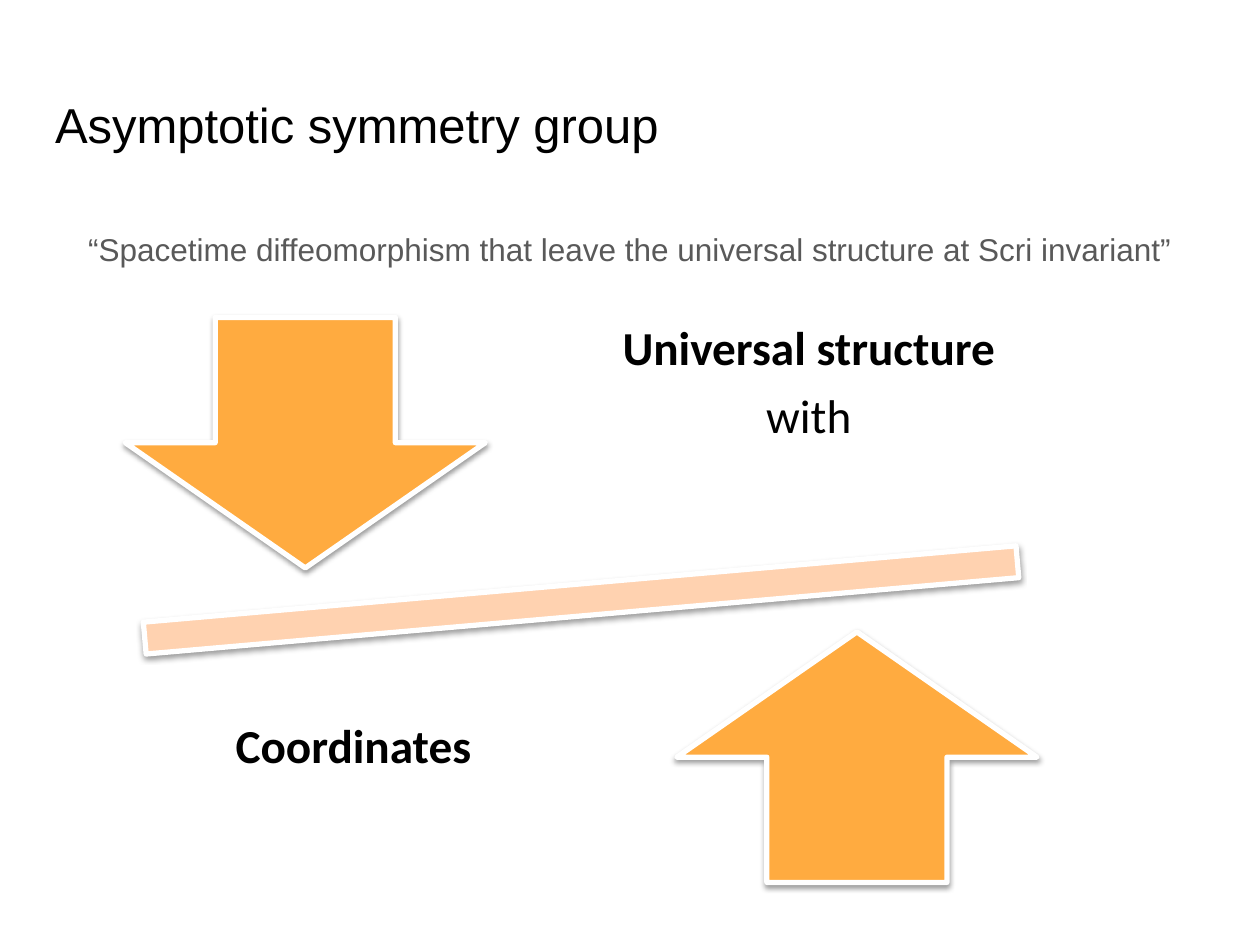
from lxml import etree
from pptx import Presentation
from pptx.dml.color import RGBColor
from pptx.enum.shapes import MSO_SHAPE as SHAPE
from pptx.enum.text import MSO_ANCHOR as ANCHOR, PP_ALIGN as ALIGN
from pptx.oxml.ns import qn
from pptx.util import Cm, Pt

HEADING = {"size": Pt(28), "name": "Arial"}
QUOTE = {"size": Pt(18), "name": "Arial"}
LABEL = {"size": Pt(27), "name": "Calibri"}


def color(value):
    return RGBColor.from_string(value)


def set_attrs(obj, values):
    for name, value in values.items():
        setattr(obj, name, value)


def add_text(slide, box, lines, font, ink="000000", para=None, margin=0.25, **frame):
    """Write lines, each a (text, bold) pair, in a text box."""
    tf = slide.shapes.add_textbox(*map(Cm, box)).text_frame
    sides = ("left", "top", "right", "bottom")
    margins = {f"margin_{side}": Cm(margin) for side in sides}
    set_attrs(tf, {"word_wrap": True, **margins, **frame})
    for i, (text, bold) in enumerate(lines):
        p = tf.paragraphs[0] if i == 0 else tf.add_paragraph()
        set_attrs(p, para or {})
        r = p.add_run()
        r.text = text
        set_attrs(r.font, {**font, "bold": bold})
        r.font.color.rgb = color(ink)


def add_shadow(sp):
    sp.shadow.inherit = False
    effects = sp._element.spPr.find(qn("a:effectLst"))
    shadow = etree.SubElement(effects, qn("a:outerShdw"), blurRad=str(Pt(3.1)),
                              dist=str(Pt(1.6)), dir="5400000", rotWithShape="0")
    ink = etree.SubElement(shadow, qn("a:srgbClr"), val="000000")
    etree.SubElement(ink, qn("a:alpha"), val="38000")


def add_solid(slide, kind, box, fill, rotation=0):
    sp = slide.shapes.add_shape(kind, *map(Cm, box))
    sp.rotation = rotation
    sp.fill.solid()
    sp.fill.fore_color.rgb = color(fill)
    sp.line.color.rgb = color("FFFFFF")
    sp.line.width = Pt(3)
    add_shadow(sp)


def add_label(slide, box, lines):
    # The deeper bottom margin lifts the centred lines.
    add_text(slide, box, lines, LABEL, margin=0.53, margin_bottom=Cm(1.9),
             vertical_anchor=ANCHOR.MIDDLE,
             para={"alignment": ALIGN.CENTER, "line_spacing": 0.9, "space_after": Pt(9.45)})


def add_balance(slide, box):
    """Draw a tilted bar with arrows and labels set point-symmetrically about its middle."""
    left, top, width, height = box
    mid_x, mid_y = left + width / 2, top + height / 2

    def centered(dx, dy, w, h):
        return mid_x + dx - w / 2, mid_y + dy - h / 2, w, h

    add_solid(slide, SHAPE.MATH_MINUS, centered(0, 0, width, 2.74), "FFD2B0", 355)
    sides = [
        (-1, SHAPE.DOWN_ARROW, 15.82, [("Universal structure", True), ("with", False)]),
        (1, SHAPE.UP_ARROW, 7.75, [("Coordinates", True)]),
    ]
    for sign, arrow, label_width, lines in sides:
        add_solid(slide, arrow, centered(sign * 5.56, sign * 3.17, 7.26, 5.05), "FFAB40")
        add_label(slide, centered(-sign * 4.59, sign * 3.67, label_width, 5.31), lines)


def main():
    prs = Presentation()
    prs.slide_width, prs.slide_height = Cm(25.4), Cm(19.05)
    slide = prs.slides.add_slide(prs.slide_layouts[6])
    add_text(slide, (0.86, 1.65, 23.67, 2.11), [("Asymptotic symmetry group", False)], HEADING)
    quote = "“Spacetime diffeomorphism that leave the universal structure at Scri invariant”"
    add_text(slide, (0.86, 4.27, 23.67, 12.65), [(quote, False)], QUOTE, "595959",
             {"alignment": ALIGN.CENTER, "line_spacing": 1.15, "space_after": Pt(16)})
    add_balance(slide, (-0.3, 5.77, 24.03, 12.65))
    prs.save("out.pptx")


if __name__ == "__main__":
    main()
